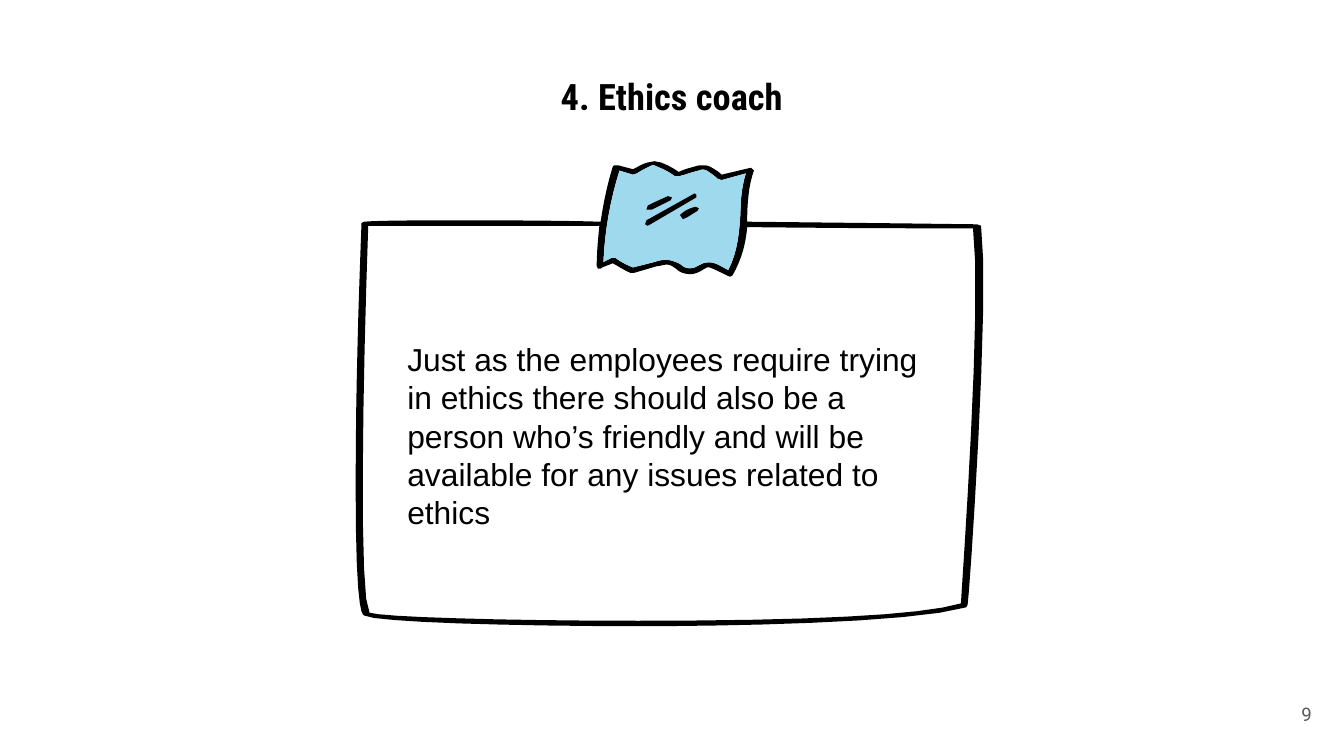
from pptx import Presentation
from pptx.dml.color import RGBColor
from pptx.enum.text import MSO_ANCHOR, PP_ALIGN
from pptx.util import Pt

LEFT, CENTER, RIGHT = PP_ALIGN.LEFT, PP_ALIGN.CENTER, PP_ALIGN.RIGHT
TOP, MIDDLE = MSO_ANCHOR.TOP, MSO_ANCHOR.MIDDLE

COLORS = {"ink": "000000", "tape": "9FD9EE", "number": "595959"}
BLANK_LAYOUT = 6
CURVE_STEPS = 8

# Each contour is a list of steps in points: (x, y) is a straight line to there,
# (x1, y1, x2, y2, x, y) is a cubic curve with two control points.
SILHOUETTE = [
    (350.6, 86.4), (347, 87.1), (344.2, 87.8, 342, 89.3, 339.1, 90.7),
    (331.2, 88.6), (329, 88.6), (328.3, 89.3),
    (325.4, 98.6, 323.3, 108.7, 321.8, 118.8),
    (295.2, 118.1, 270, 118.1, 248.4, 118.1),
    (222.5, 118.1, 204.5, 118.1, 195.1, 118.8), (193.7, 119.5),
    (193.7, 120.2, 191.5, 171.4, 190.8, 222.5),
    (189.4, 326.9, 193.7, 329, 195.1, 329.8),
    (200.9, 333.4, 275.8, 335.5, 342, 335.5),
    (384.5, 335.5, 487.4, 334.1, 517.7, 325.4), (518.4, 324),
    (519.1, 322.6, 530.6, 157, 525.6, 121), (523.4, 120.2),
    (522.7, 120.2, 466.6, 119.5, 400.3, 118.8),
    (400.3, 109.4, 401, 99.4, 403.9, 91.4), (402.5, 90), (401.8, 90),
    (386.6, 93.6), (385.2, 92.2, 383, 90.7, 381.6, 90),
    (379.4, 88.6, 378, 88.6, 376.6, 88.6),
    (375.1, 88.6, 373.7, 88.6, 372.2, 89.3),
    (369.4, 90, 366.5, 90.7, 363.6, 92.2),
    (360.7, 90, 357.8, 88.6, 354.2, 87.1),
]
PAGE = [
    (248.4, 121), (321.1, 121), (320.4, 128.2, 319.7, 135.4, 319.7, 142.6),
    (320.4, 144), (321.8, 144), (322.6, 143.3), (328.3, 141.1),
    (331.2, 142.6, 334.1, 144.7, 337.7, 146.2), (339.8, 146.2), (352.1, 142.6),
    (353.5, 142.6, 355.7, 141.8, 357.1, 141.8),
    (359.3, 141.8, 360, 142.6, 362.2, 144),
    (364.3, 146.2, 367.2, 146.9, 370.1, 146.9),
    (371.5, 146.9, 373.7, 146.2, 375.1, 145.4), (378.7, 143.3), (380.2, 143.3),
    (383.8, 144.7, 386.6, 146.2, 389.5, 147.6), (391, 148.3), (392.4, 147.6),
    (397.4, 139, 399.6, 130.3, 400.3, 121.7),
    (459.4, 122.4, 511.2, 122.4, 521.3, 122.4),
    (526.3, 159.1, 515.5, 311, 514.8, 323.3),
    (493.2, 329.8, 430.6, 332.6, 342, 332.6),
    (268.6, 332.6, 203.8, 330.5, 198, 328.3),
    (192.2, 321.8, 194.4, 201.6, 197.3, 121),
]
TAPE = [
    (350.6, 88.6), (352.1, 89.3), (355.7, 90.7, 358.6, 92.2, 361.4, 94.3),
    (364.3, 94.3), (367.2, 93.6, 370.8, 92.2, 374.4, 91.4),
    (375.8, 90.7, 377.3, 90.7, 378.7, 91.4),
    (380.9, 92.9, 383, 94.3, 384.5, 95.8), (386.6, 96.5), (399.6, 92.9),
    (397.4, 100.1, 396.7, 107.3, 396.7, 114.5),
    (396, 124.6, 395.3, 134.6, 390.2, 144.7),
    (387.4, 143.3, 385.2, 141.8, 383, 141.1),
    (380.9, 140.4, 378.7, 140.4, 376.6, 141.1), (372.2, 143.3),
    (370.1, 144, 367.9, 144, 365.8, 142.6),
    (364.3, 141.1, 362.2, 140.4, 360, 139.7),
    (357.8, 139, 354.2, 139, 350.6, 140.4), (339.1, 143.3),
    (335.5, 141.8, 332.6, 140.4, 329.8, 138.2), (327.6, 138.2), (323.3, 140.4),
    (324, 123.8, 326.9, 107.3, 331.9, 91.4), (339.1, 93.6), (341.3, 92.9),
    (343.4, 91.4, 346.3, 90, 349.2, 88.6),
]
GLINTS = [
    [(357.8, 105.1), (351.4, 108), (347, 110.2), (346.3, 112.3),
     (349.2, 112.3), (353.5, 110.2), (359.3, 107.3), (360, 105.8)],
    [(372.2, 103.7), (370.8, 104.4), (346.3, 118.1), (345.6, 120.2),
     (347, 121), (348.5, 120.2), (373, 105.8), (373, 104.4)],
    [(373, 110.9), (372.2, 110.9), (369.4, 111.6, 366.5, 113, 364.3, 115.2),
     (365.8, 117.4), (367.9, 116.6), (373.7, 113), (374.4, 111.6)],
]


def flatten(contour):
    """Turn the lines and curves of a contour into a list of vertices."""
    vertices = []
    for step in contour:
        if len(step) == 2:
            vertices.append(step)
            continue
        x0, y0 = vertices[-1]
        x1, y1, x2, y2, x3, y3 = step
        for index in range(1, CURVE_STEPS + 1):
            t = index / CURVE_STEPS
            u = 1 - t
            a, b, c, d = u ** 3, 3 * u * u * t, 3 * u * t * t, t ** 3
            vertices.append((a * x0 + b * x1 + c * x2 + d * x3,
                             a * y0 + b * y1 + c * y2 + d * y3))
    return [(Pt(x), Pt(y)) for x, y in vertices]


def add_outline(slide, contours, color):
    """Add one filled freeform; contours after the first are holes."""
    first, *holes = [flatten(contour) for contour in contours]
    builder = slide.shapes.build_freeform(*first[0], scale=1.0)
    builder.add_line_segments(first[1:], close=True)
    for hole in holes:
        builder.move_to(*hole[0])
        builder.add_line_segments(hole[1:], close=True)
    shape = builder.convert_to_shape()
    shape.shadow.inherit = False
    shape.fill.solid()
    shape.fill.fore_color.rgb = RGBColor.from_string(COLORS[color])
    shape.line.fill.background()


def add_text(slide, text, box, font, color, align=LEFT, anchor=TOP,
             margin=0, wrap=True):
    shape = slide.shapes.add_textbox(*(Pt(length) for length in box))
    frame_format = {"word_wrap": wrap, "vertical_anchor": anchor}
    for side in ("left", "top", "right", "bottom"):
        frame_format[f"margin_{side}"] = Pt(margin)
    for name, value in frame_format.items():
        setattr(shape.text_frame, name, value)
    paragraph = shape.text_frame.paragraphs[0]
    paragraph.alignment = align
    run = paragraph.add_run()
    run.text = text
    for name, value in font.items():
        setattr(run.font, name, value)
    run.font.color.rgb = RGBColor.from_string(COLORS[color])


def main():
    presentation = Presentation()
    presentation.slide_width, presentation.slide_height = Pt(720), Pt(405)
    slide = presentation.slides.add_slide(presentation.slide_layouts[BLANK_LAYOUT])

    add_text(slide, "4. Ethics coach", (36, 32.4, 648, 38.2),
             {"name": "Roboto Condensed", "size": Pt(19.5), "bold": True},
             "ink", CENTER, MIDDLE, margin=7.2)

    add_outline(slide, [SILHOUETTE, PAGE, TAPE], "ink")
    add_outline(slide, [TAPE], "tape")
    for glint in GLINTS:
        add_outline(slide, [glint], "ink")

    add_text(slide, "Just as the employees require trying in ethics there should "
             "also be a person who’s friendly and will be available for any "
             "issues related to ethics", (218.2, 182.2, 283.7, 99.4),
             {"name": "Arial", "size": Pt(17)}, "ink")
    add_text(slide, "9", (689, 370, 20.9, 25.2),
             {"name": "Roboto", "size": Pt(10)}, "number",
             RIGHT, MIDDLE, margin=7.2, wrap=False)

    presentation.save("out.pptx")


if __name__ == "__main__":
    main()
